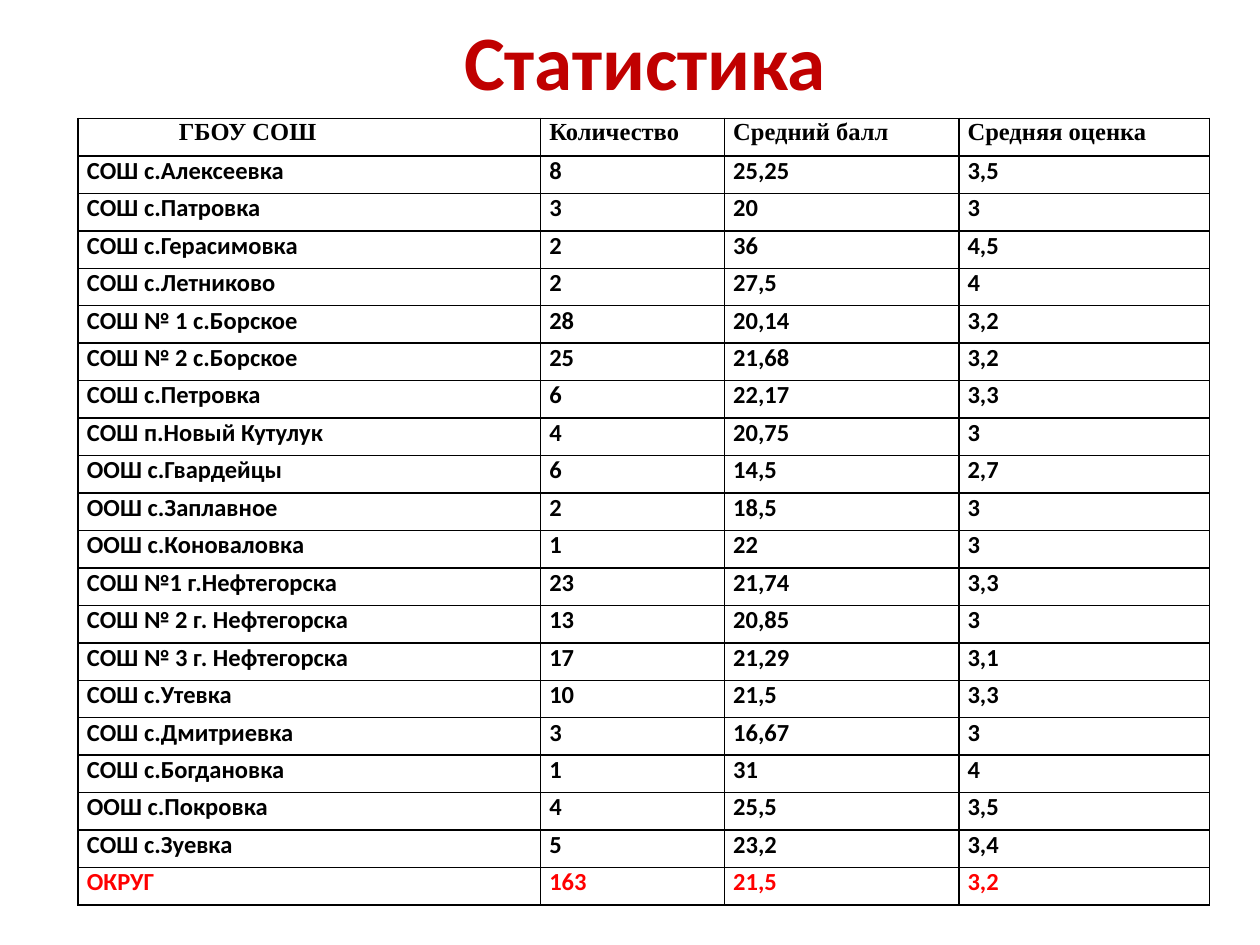
from lxml import etree
from pptx import Presentation, util as u
from pptx.dml.color import RGBColor
from pptx.enum import text
from pptx.oxml.ns import qn

RED = RGBColor(0xC0, 0x00, 0x00)
BRIGHT = RGBColor(0xFF, 0x00, 0x00)
BLACK = RGBColor(0x00, 0x00, 0x00)

TITLE = "Статистика"
HEAD = ("ГБОУ СОШ", "Количество", "Средний балл", "Средняя оценка")
SCHOOLS = [
    ("СОШ с.Алексеевка", "8", "25,25", "3,5"),
    ("СОШ с.Патровка", "3", "20", "3"),
    ("СОШ с.Герасимовка", "2", "36", "4,5"),
    ("СОШ с.Летниково", "2", "27,5", "4"),
    ("СОШ № 1 с.Борское", "28", "20,14", "3,2"),
    ("СОШ № 2 с.Борское", "25", "21,68", "3,2"),
    ("СОШ с.Петровка", "6", "22,17", "3,3"),
    ("СОШ п.Новый Кутулук", "4", "20,75", "3"),
    ("ООШ с.Гвардейцы", "6", "14,5", "2,7"),
    ("ООШ с.Заплавное", "2", "18,5", "3"),
    ("ООШ с.Коноваловка", "1", "22", "3"),
    ("СОШ №1 г.Нефтегорска", "23", "21,74", "3,3"),
    ("СОШ № 2 г. Нефтегорска", "13", "20,85", "3"),
    ("СОШ № 3 г. Нефтегорска", "17", "21,29", "3,1"),
    ("СОШ с.Утевка", "10", "21,5", "3,3"),
    ("СОШ с.Дмитриевка", "3", "16,67", "3"),
    ("СОШ с.Богдановка", "1", "31", "4"),
    ("ООШ с.Покровка", "4", "25,5", "3,5"),
    ("СОШ с.Зуевка", "5", "23,2", "3,4"),
]
TOTAL = ("ОКРУГ", "163", "21,5", "3,2")
ROWS = [HEAD, *SCHOOLS, TOTAL]

WIDTHS = (3.67, 1.46, 1.86, 1.99)
LEFT, TOP, TALL = 0.62, 0.94, 6.25
PAD = 0.07
INDENT = 0.73


def add_run(para, words, size, font, color):
    run = para.add_run()
    run.text = words
    run.font.size = u.Pt(size)
    run.font.name = font
    run.font.bold = True
    run.font.color.rgb = color


def add_borders(cell):
    props = cell._tc.get_or_add_tcPr()
    for i, side in enumerate(("lnL", "lnR", "lnT", "lnB")):
        line = etree.Element(qn("a:" + side), w=str(u.Pt(1)))
        fill = etree.SubElement(line, qn("a:solidFill"))
        etree.SubElement(fill, qn("a:srgbClr"), val=str(BLACK))
        props.insert(i, line)


def fill_cell(cell, words, font, color):
    cell.margin_left = cell.margin_right = u.Inches(PAD)
    cell.margin_top = cell.margin_bottom = 0
    cell.fill.background()
    add_borders(cell)
    para = cell.text_frame.paragraphs[0]
    para.alignment = text.PP_ALIGN.JUSTIFY
    add_run(para, words, 14, font, color)


prs = Presentation()
prs.slide_width, prs.slide_height = u.Inches(10), u.Inches(7.5)
slide = prs.slides.add_slide(prs.slide_layouts[5])

# Title
title = slide.shapes.title
title.left, title.top = u.Inches(LEFT), 0
title.width, title.height = u.Inches(9), u.Inches(TOP)
frame = title.text_frame
frame.vertical_anchor = text.MSO_ANCHOR.MIDDLE
frame.paragraphs[0].alignment = text.PP_ALIGN.CENTER
add_run(frame.paragraphs[0], TITLE, 44, "Calibri", RED)

# Results table
table = slide.shapes.add_table(
    len(ROWS), len(HEAD), u.Inches(LEFT), u.Inches(TOP),
    u.Inches(sum(WIDTHS)), u.Inches(TALL)).table
table.first_row = table.horz_banding = False
for col, wide in zip(table.columns, WIDTHS):
    col.width = u.Inches(wide)
for r, row in enumerate(ROWS):
    font = "Times New Roman" if row is HEAD else "Calibri"
    color = BRIGHT if row is TOTAL else BLACK
    for c, words in enumerate(row):
        fill_cell(table.cell(r, c), words, font, color)

# The first heading is set in from the left
first = table.cell(0, 0).text_frame.paragraphs[0]
first._p.get_or_add_pPr().set("marL", str(u.Inches(INDENT)))

prs.save("out.pptx")
